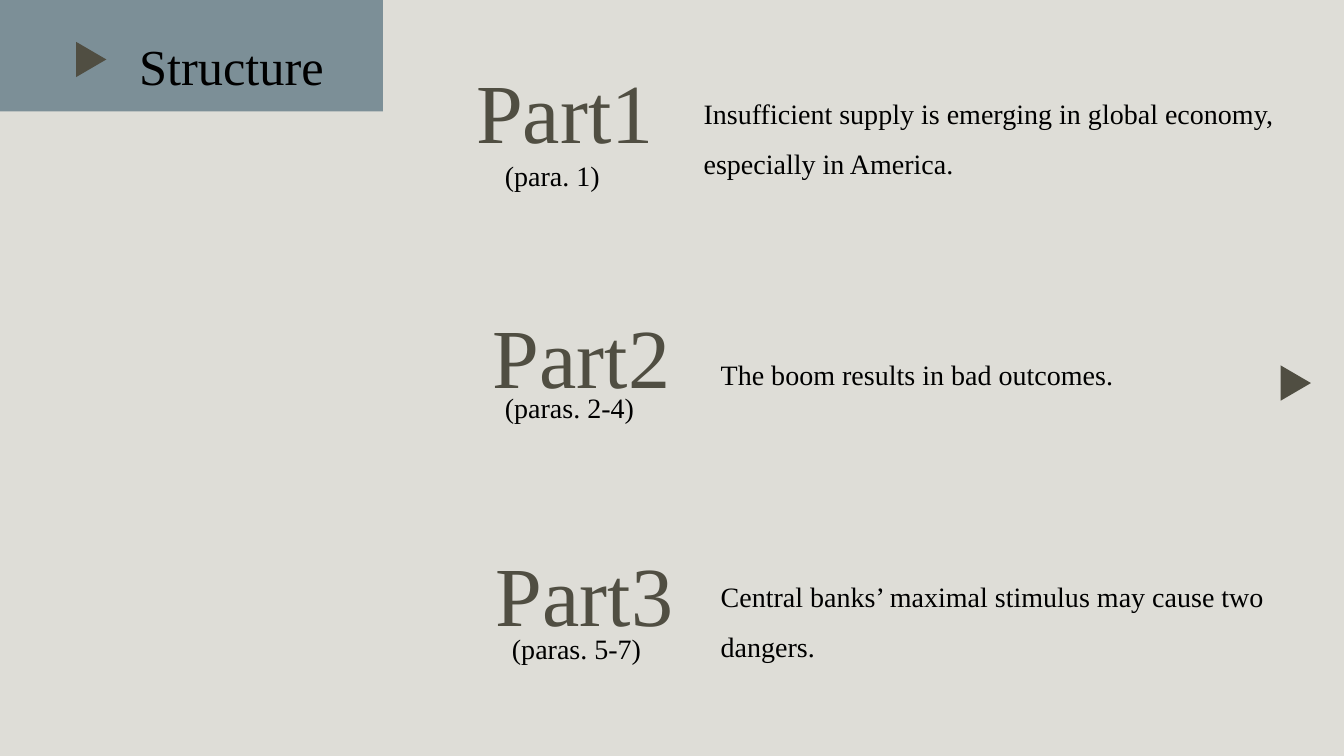
import pptx
import pptx.dml.color
import pptx.enum.shapes
import pptx.enum.text
import pptx.util

COLORS = {"background": "DEDDD7", "banner": "7C8F97", "accent": "504E42", "text": "000000"}
ALIGN = pptx.enum.text.PP_ALIGN
SHAPE = pptx.enum.shapes.MSO_SHAPE


class StructureSlide:
    """Slide on a grid of 40 columns by 30 rows, with its text style."""

    font_name = "Times New Roman"

    def __init__(self, deck):
        self.column = deck.slide_width / 40
        self.row = deck.slide_height / 30
        self.slide = deck.slides.add_slide(deck.slide_layouts[6])
        self.paint(self.slide.background.fill, "background")

    def paint(self, fill, color):
        fill.solid()
        fill.fore_color.rgb = pptx.dml.color.RGBColor.from_string(COLORS[color])

    def place(self, left, top, width, height):
        return (round(left * self.column), round(top * self.row),
                round(width * self.column), round(height * self.row))

    def add_text(self, words, box, size=20, color="text", align=ALIGN.LEFT, spacing=1.0, side_inset=0.05):
        frame = self.slide.shapes.add_textbox(*self.place(*box)).text_frame
        frame.word_wrap = True
        frame.auto_size = pptx.enum.text.MSO_AUTO_SIZE.SHAPE_TO_FIT_TEXT
        frame.margin_left = frame.margin_right = pptx.util.Inches(side_inset)
        frame.margin_top = frame.margin_bottom = pptx.util.Inches(0.05)
        paragraph = frame.paragraphs[0]
        paragraph.text = words
        paragraph.alignment = align
        paragraph.line_spacing = spacing
        paragraph.font.name = self.font_name
        paragraph.font.size = pptx.util.Pt(size)
        self.paint(paragraph.font.fill, color)

    def add_shape(self, kind, box, color, rotation=0):
        shape = self.slide.shapes.add_shape(kind, *self.place(*box))
        shape.shadow.inherit = False
        shape.rotation = rotation
        self.paint(shape.fill, color)
        shape.line.fill.background()

    def add_marker(self, left, top):
        self.add_shape(SHAPE.ISOSCELES_TRIANGLE, (left, top, 1.05, 1.2), "accent", rotation=90)

    def add_section(self, heading, heading_box, summary, summary_box, paras, paras_box):
        self.add_text(heading, heading_box, size=60, color="accent", align=ALIGN.RIGHT)
        self.add_text(summary, summary_box, spacing=1.5)
        self.add_text(paras, paras_box, side_inset=0.1)


SECTIONS = [
    ("Part1", (13, 2.16, 6.6, 4.44),
     "Insufficient supply is emerging in global economy, especially in America.",
     (20.79, 2.96, 18.63, 4.44), "(para. 1)", (14.73, 6.08, 16.68, 1.76)),
    ("Part2", (14.13, 11.88, 5.97, 4.44),
     "The boom results in bad outcomes.",
     (21.3, 13.32, 15.06, 2.4), "(paras. 2-4)", (14.73, 15.32, 16.68, 1.76)),
    ("Part3", (14.13, 21.32, 6.06, 4.44),
     "Central banks’ maximal stimulus may cause two dangers.",
     (21.3, 22.12, 16.8, 4.44), "(paras. 5-7)", (14.94, 24.88, 16.68, 1.76)),
]


def main():
    deck = pptx.Presentation()
    deck.slide_width = pptx.util.Inches(13.33)
    deck.slide_height = pptx.util.Inches(7.5)

    structure = StructureSlide(deck)
    for section in SECTIONS:
        structure.add_section(*section)
    structure.add_marker(38.04, 14.6)

    structure.add_shape(SHAPE.RECTANGLE, (0, 0, 11.4, 4.42), "banner")
    structure.add_text("Structure", (3.99, 0, 18.63, 4.04), size=36, spacing=1.5)
    structure.add_marker(2.19, 1.76)

    deck.save("out.pptx")


if __name__ == "__main__":
    main()
